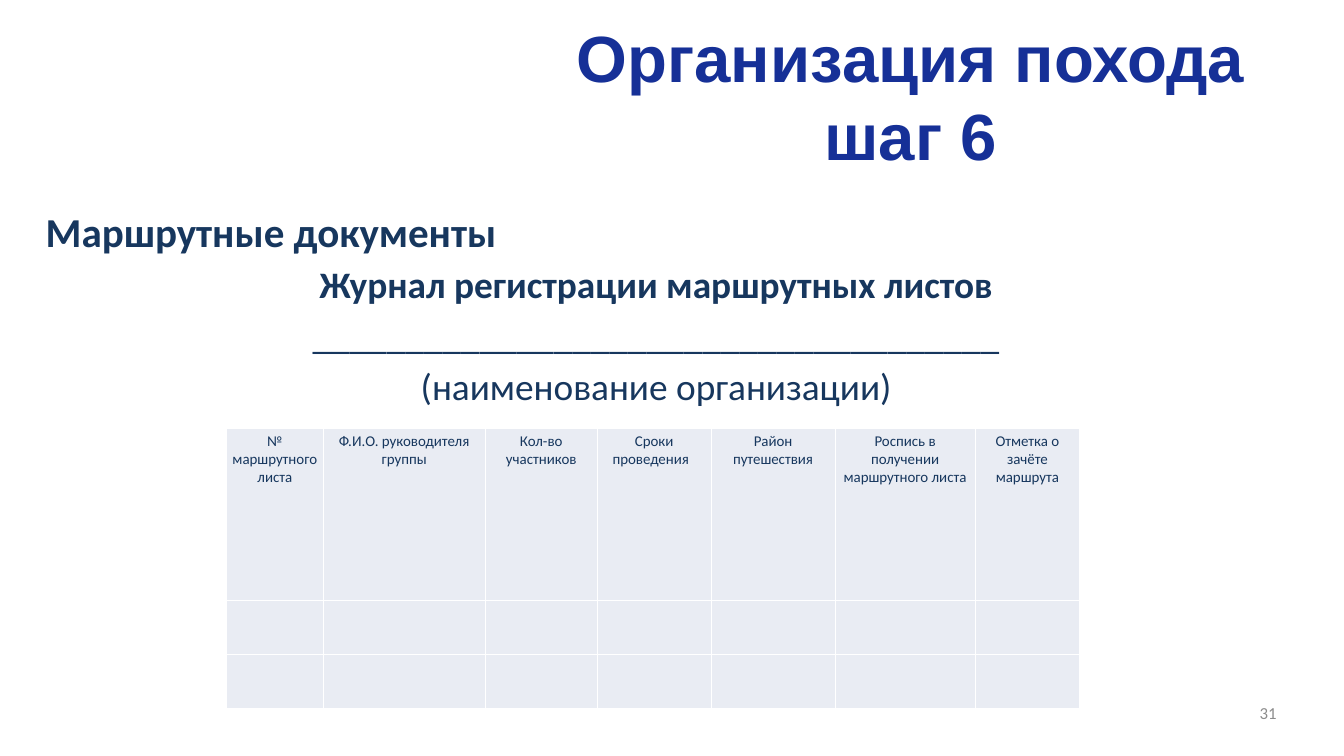
from lxml import etree
from pptx import Presentation
from pptx import util as u
from pptx.dml.color import RGBColor
from pptx.enum import text
from pptx.oxml import ns

WIDTH, HEIGHT = 20, 11.25
NAVY, BLUE, GRAY, PALE, WHITE = "17375E", "163097", "8C8C8C", "E9ECF3", "FFFFFF"
LEFT, CENTER, RIGHT = (text.PP_ALIGN.LEFT, text.PP_ALIGN.CENTER, text.PP_ALIGN.RIGHT)

TITLE_LINES = ["Организация похода", "шаг 6"]
BODY_LINES = [
    ("Маршрутные документы", LEFT, 0, {"size": 44, "bold": True}),
    ("Журнал регистрации маршрутных листов", CENTER, 6.4, {"size": 40, "bold": True}),
    ("_" * 37, CENTER, 6.4, {"size": 40, "bold": False}),
    ("(наименование организации)", CENTER, 6.4, {"size": 40, "bold": False}),
]
HEADERS = [
    "№ маршрутного листа", "Ф.И.О. руководителя группы", "Кол-во участников",
    "Сроки проведения  ", "Район путешествия",
    "Роспись в получении маршрутного листа", "Отметка о зачёте маршрута",
]
COLUMN_WIDTHS = [1.44, 2.41, 1.67, 1.69, 1.85, 2.08, 1.56]
ROW_HEIGHTS = [2.56, 0.8, 0.8]


def paint(target, color):
    target.rgb = RGBColor.from_string(color)


def set_all(target, values):
    for name, value in values.items():
        setattr(target, name, value)


def place(item, box):
    names = ("left", "top", "width", "height")
    set_all(item, dict(zip(names, (u.Inches(side) for side in box))))


def prepare(frame):
    set_all(frame, {
        "margin_left": 0, "margin_right": 0, "margin_top": 0, "margin_bottom": 0,
        "word_wrap": True, "auto_size": text.MSO_AUTO_SIZE.NONE,
        "vertical_anchor": text.MSO_ANCHOR.TOP,
    })


def write(para, words, align, color, size, name="Calibri", bold=False):
    para.alignment = align
    span = para.add_run()
    span.text = words
    set_all(span.font, {"name": name, "size": u.Pt(size), "bold": bold})
    paint(span.font.color, color)


def add_title(page, box):
    title = page.shapes.title
    place(title, box)
    prepare(title.text_frame)
    para = title.text_frame.paragraphs[0]
    for number, line in enumerate(TITLE_LINES):
        if number:
            para.add_line_break()
        write(para, line, CENTER, BLUE, 70, "Arial", True)


def add_body(page, box):
    body = page.placeholders[1]
    place(body, box)
    frame = body.text_frame
    prepare(frame)
    for number, (words, align, gap, style) in enumerate(BODY_LINES):
        para = frame.add_paragraph() if number else frame.paragraphs[0]
        para.space_before = u.Pt(gap)
        write(para, words, align, NAVY, **style)
        settings = para._p.get_or_add_pPr()
        settings.set("marL", "0")
        settings.set("indent", "0")
        etree.SubElement(settings, ns.qn("a:buNone"))


def style_cell(cell):
    set_all(cell, {
        "margin_left": u.Inches(0.06), "margin_right": u.Inches(0.06),
        "margin_top": u.Inches(0.05), "margin_bottom": u.Inches(0.05),
    })
    settings = cell._tc.get_or_add_tcPr()
    for side in ("a:lnL", "a:lnR", "a:lnT", "a:lnB"):
        line = etree.SubElement(settings, ns.qn(side), w=str(u.Pt(0.96)))
        fill = etree.SubElement(line, ns.qn("a:solidFill"))
        etree.SubElement(fill, ns.qn("a:srgbClr"), val=WHITE)
    cell.fill.solid()
    paint(cell.fill.fore_color, PALE)


def add_register(page, box):
    left, top, width, height = (u.Inches(side) for side in box)
    table = page.shapes.add_table(
        len(ROW_HEIGHTS), len(HEADERS), left, top, width, height).table
    set_all(table, {"first_row": False, "horz_banding": False})
    for column, share in zip(table.columns, COLUMN_WIDTHS):
        column.width = int(width * share / sum(COLUMN_WIDTHS))
    for row, share in zip(table.rows, ROW_HEIGHTS):
        row.height = int(height * share / sum(ROW_HEIGHTS))
    for cell in table.iter_cells():
        style_cell(cell)
    for cell, words in zip(table.rows[0].cells, HEADERS):
        write(cell.text_frame.paragraphs[0], words, CENTER, NAVY, 16)


def add_page_number(page, box):
    number = page.shapes.add_textbox(*(u.Inches(side) for side in box))
    prepare(number.text_frame)
    write(number.text_frame.paragraphs[0], "31", RIGHT, GRAY, 18)


def main():
    deck = Presentation()
    set_all(deck, {"slide_width": u.Inches(WIDTH), "slide_height": u.Inches(HEIGHT)})
    page = deck.slides.add_slide(deck.slide_layouts[1])
    add_title(page, (7.58, 0.25, 11.94, 2.36))
    add_body(page, (0.68, 3.07, 18.17, 3.95))
    add_register(page, (3.37, 6.38, sum(COLUMN_WIDTHS), sum(ROW_HEIGHTS)))
    add_page_number(page, (14.4, 10.46, 4.6, 0.56))
    deck.save("out.pptx")


if __name__ == "__main__":
    main()
